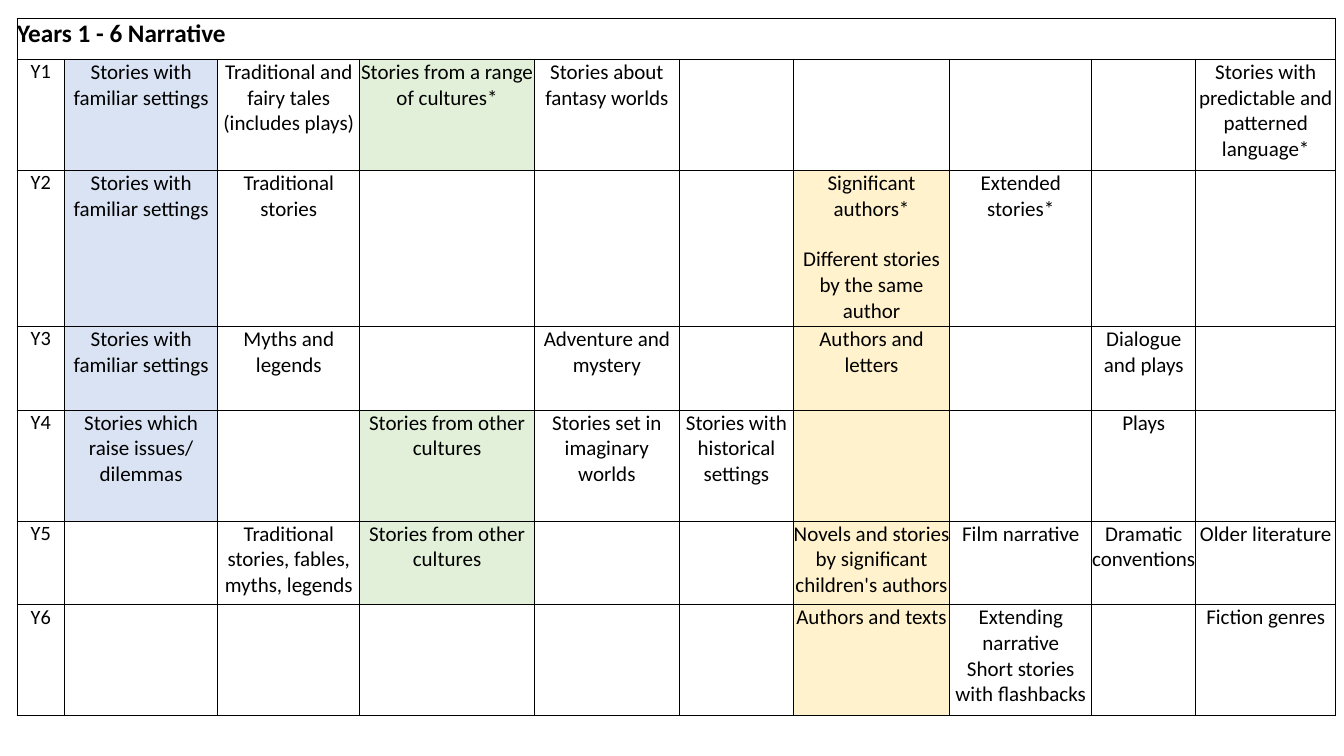
from pptx import Presentation
from pptx.dml.color import RGBColor
from pptx.enum.text import MSO_ANCHOR, PP_ALIGN
from pptx.oxml.ns import qn
from pptx.util import Inches, Pt
from lxml.etree import SubElement

COLORS = {"ink": "000000", "familiar": "DAE3F3", "cultures": "E2F0D9", "authors": "FFF2CC"}
COLUMN_WIDTHS = [0.47, 1.52, 1.41, 1.73, 1.44, 1.13, 1.55, 1.41, 1.03, 1.39]
ROW_HEIGHTS = [0.41, 1.1, 1.55, 0.83, 1.1, 0.83, 1.1]
TITLE = "Years 1 - 6 Narrative"
YEARS = [
    ["Y1", "Stories with familiar settings", "Traditional and fairy tales (includes plays)",
     "Stories from a range of cultures*", "Stories about fantasy worlds", "", "", "", "",
     "Stories with predictable and patterned language*"],
    ["Y2", "Stories with familiar settings", "Traditional stories", "", "", "",
     "Significant authors*\nDifferent stories by the same author", "Extended stories*", "", ""],
    ["Y3", "Stories with familiar settings", "Myths and legends", "", "Adventure and mystery", "",
     "Authors and letters", "", "Dialogue and plays", ""],
    ["Y4", "Stories which raise issues/\ndilemmas", "", "Stories from other cultures",
     "Stories set in imaginary worlds", "Stories with historical settings", "", "", "Plays", ""],
    ["Y5", "", "Traditional stories, fables, myths, legends", "Stories from other cultures", "", "",
     "Novels and stories by significant children's authors", "Film narrative",
     "Dramatic conventions", "Older literature"],
    ["Y6", "", "", "", "", "", "Authors and texts",
     "Extending narrative\vShort stories with flashbacks", "", "Fiction genres"],
]
STRAND_FILLS = {
    1: ("familiar", {"Y1", "Y2", "Y3", "Y4"}),
    3: ("cultures", {"Y1", "Y4", "Y5"}),
    6: ("authors", {"Y2", "Y3", "Y4", "Y5", "Y6"}),
}


def set_borders(cell):
    properties = cell._tc.get_or_add_tcPr()
    for side in ("a:lnL", "a:lnR", "a:lnT", "a:lnB"):
        line = SubElement(properties, qn(side), w=str(Pt(1)))
        fill = SubElement(line, qn("a:solidFill"))
        SubElement(fill, qn("a:srgbClr"), val=COLORS["ink"])


def format_cell(cell, text="", size=15, bold=False, fill=None):
    cell.margin_left = cell.margin_right = cell.margin_top = Inches(0)
    cell.margin_bottom = Inches(0.02)
    cell.vertical_anchor = MSO_ANCHOR.TOP
    set_borders(cell)
    if fill:
        cell.fill.solid()
        cell.fill.fore_color.rgb = RGBColor.from_string(COLORS[fill])
    else:
        cell.fill.background()
    cell.text_frame.text = text
    for paragraph in cell.text_frame.paragraphs:
        paragraph.alignment = PP_ALIGN.CENTER
        paragraph.font.name = "Calibri"
        paragraph.font.size = Pt(size)
        paragraph.font.bold = bold
        paragraph.font.color.rgb = RGBColor.from_string(COLORS["ink"])


def add_grid(slide):
    table = slide.shapes.add_table(
        len(ROW_HEIGHTS), len(COLUMN_WIDTHS), Inches(0.17), Inches(0.18),
        Inches(sum(COLUMN_WIDTHS)), Inches(sum(ROW_HEIGHTS))).table
    table.first_row = False
    table.horz_banding = False
    for column, width in zip(table.columns, COLUMN_WIDTHS):
        column.width = Inches(width)
    for row, height in zip(table.rows, ROW_HEIGHTS):
        row.height = Inches(height)
    return table


def fill_title_row(table):
    for cell in table.rows[0].cells:
        format_cell(cell)
    title_cell = table.cell(0, 0)
    title_cell.merge(table.cell(0, len(COLUMN_WIDTHS) - 1))
    title_cell.text_frame.text = TITLE
    title = title_cell.text_frame.paragraphs[0]
    title.font.bold = True


def fill_year_rows(table):
    for row_number, entries in enumerate(YEARS, start=1):
        for column_number, text in enumerate(entries):
            fill, shaded_years = STRAND_FILLS.get(column_number, (None, set()))
            format_cell(table.cell(row_number, column_number), text,
                        size=15 if column_number else 14.5,
                        fill=fill if entries[0] in shaded_years else None)


def main():
    presentation = Presentation()
    presentation.slide_width = Inches(13.33)
    presentation.slide_height = Inches(7.5)
    slide = presentation.slides.add_slide(presentation.slide_layouts[6])
    table = add_grid(slide)
    fill_title_row(table)
    fill_year_rows(table)
    table.cell(2, 6).text_frame.paragraphs[1].space_before = Pt(18)
    presentation.save("out.pptx")


if __name__ == "__main__":
    main()
